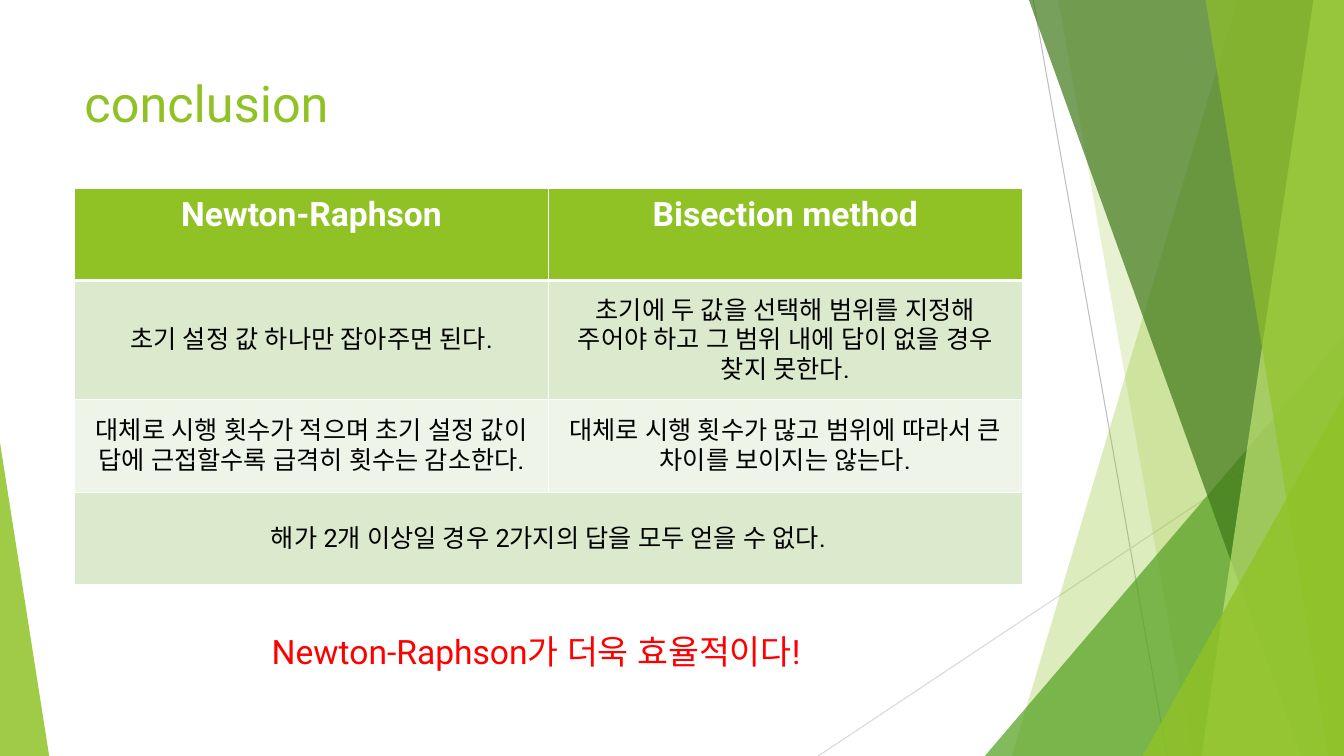
"""Build the conclusion slide comparing two root-finding methods."""
from pptx import Presentation
from pptx.dml.color import RGBColor
from pptx.enum.lang import MSO_LANGUAGE_ID
from pptx.enum.shapes import MSO_CONNECTOR, MSO_SHAPE
from pptx.enum.text import MSO_ANCHOR, PP_ALIGN
from pptx.oxml import parse_xml
from pptx.oxml.ns import nsdecls, qn
from pptx.oxml.xmlchemy import OxmlElement
from pptx.util import Cm, Pt

WIDTH, HEIGHT = 33.87, 19.05
FONT = "Roboto"
LIME = RGBColor(0x90, 0xC2, 0x26)
LEAF = RGBColor(0x54, 0xA0, 0x21)
FOREST = RGBColor(0x3F, 0x78, 0x19)
PALE_LIME = RGBColor(0xC0, 0xE4, 0x74)
BAND_DARK = RGBColor(0xDB, 0xE9, 0xCD)
BAND_LIGHT = RGBColor(0xEE, 0xF4, 0xE8)
GREY = RGBColor(0xBF, 0xBF, 0xBF)
LIGHT_GREY = RGBColor(0xD9, 0xD9, 0xD9)
WHITE = RGBColor(0xFF, 0xFF, 0xFF)
BLACK = RGBColor(0, 0, 0)
RED = RGBColor(0xFF, 0, 0)

ROWS = [
    ("Newton-Raphson", "Bisection method"),
    ("초기 설정 값 하나만 잡아주면 된다.",
     "초기에 두 값을 선택해 범위를 지정해 주어야 하고 그 범위 내에 답이 없을 경우 찾지 못한다."),
    ("대체로 시행 횟수가 적으며 초기 설정 값이 답에 근접할수록 급격히 횟수는 감소한다.",
     "대체로 시행 횟수가 많고 범위에 따라서 큰 차이를 보이지는 않는다."),
    ("해가 2개 이상일 경우 2가지의 답을 모두 얻을 수 없다.",),
]
ROW_HEIGHTS = [2.32, 3, 2.34, 2.32]
ROW_FILLS = [LIME, BAND_DARK, BAND_LIGHT, BAND_DARK]


def write(tf, text, size=18, color=BLACK, bold=False, align=PP_ALIGN.CENTER):
    """Put one formatted run into a text frame."""
    p = tf.paragraphs[0]
    p.alignment = align
    r = p.add_run()
    r.text = text
    r.font.name, r.font.size, r.font.bold = FONT, Pt(size), bold
    r.font.color.rgb = color
    r.font.language_id = MSO_LANGUAGE_ID.KOREAN
    ea = OxmlElement("a:ea")
    ea.set("typeface", FONT)
    r.font._element.find(qn("a:latin")).addnext(ea)


class SlideBuilder:
    """Draw styled elements on the current slide."""

    def __init__(self, slide):
        self.s = slide

    def line(self, x1, y1, x2, y2, color):
        """Draw a thin straight line."""
        cx = self.s.shapes.add_connector(
            MSO_CONNECTOR.STRAIGHT, Cm(x1), Cm(y1), Cm(x2), Cm(y2))
        cx.line.color.rgb = color
        cx.line.width = Pt(0.75)
        cx.element.spPr.append(OxmlElement("a:effectLst"))

    def paint(self, sp, color, opacity):
        """Give a shape a translucent fill and no outline."""
        sp.shadow.inherit = False
        sp.fill.solid()
        sp.fill.fore_color.rgb = color
        sp.line.fill.background()
        alpha = OxmlElement("a:alpha")
        alpha.set("val", str(opacity * 1000))
        sp.element.spPr.find(f"{qn('a:solidFill')}/{qn('a:srgbClr')}").append(alpha)

    def blade(self, top, bottom, color, opacity):
        """Fill from a slanted left edge to the right side of the slide."""
        builder = self.s.shapes.build_freeform(Cm(top), 0)
        builder.add_line_segments([
            (Cm(WIDTH), 0), (Cm(WIDTH), Cm(HEIGHT)), (Cm(bottom), Cm(HEIGHT))])
        self.paint(builder.convert_to_shape(), color, opacity)

    def triangle(self, x, y, width, apex, color, opacity):
        """Draw a triangle standing on the bottom edge of the slide."""
        sp = self.s.shapes.add_shape(
            MSO_SHAPE.ISOSCELES_TRIANGLE, Cm(x), Cm(y), Cm(width), Cm(HEIGHT - y))
        sp.adjustments[0] = apex
        self.paint(sp, color, opacity)

    def text(self, x, y, width, height, text, **style):
        """Add a wrapped text box."""
        tf = self.s.shapes.add_textbox(Cm(x), Cm(y), Cm(width), Cm(height)).text_frame
        tf.word_wrap = True
        write(tf, text, **style)

    def cell(self, cell, fill, bottom):
        """Fill a table cell and give it white borders."""
        cell.fill.solid()
        cell.fill.fore_color.rgb = fill
        tc_pr = cell._tc.get_or_add_tcPr()
        for i, (side, width) in enumerate(zip("LRTB", (1, 1, 1, bottom))):
            tc_pr.insert(i, parse_xml(
                f'<a:ln{side} {nsdecls("a")} w="{Pt(width)}"><a:solidFill>'
                f'<a:srgbClr val="{WHITE}"/></a:solidFill></a:ln{side}>'))

    def table(self, x, y, width, rows, heights, fills):
        """Add the comparison table; a single-entry row spans both columns."""
        table = self.s.shapes.add_table(
            len(rows), 2, Cm(x), Cm(y), Cm(width), Cm(sum(heights))).table
        for i, (texts, height, fill) in enumerate(zip(rows, heights, fills)):
            header = i == 0
            table.rows[i].height = Cm(height)
            for cell in table.rows[i].cells:
                self.cell(cell, fill, 3 if header else 1)
            if len(texts) == 1:
                table.cell(i, 0).merge(table.cell(i, 1))
            for j, text in enumerate(texts):
                cell = table.cell(i, j)
                cell.vertical_anchor = MSO_ANCHOR.TOP if header else MSO_ANCHOR.MIDDLE
                if header:
                    cell.margin_top = Cm(0.18)
                write(cell.text_frame, text, size=24 if header else 18,
                      color=WHITE if header else BLACK, bold=header)


def main():
    """Assemble and save the slide."""
    prs = Presentation()
    prs.slide_width, prs.slide_height = Cm(WIDTH), Cm(HEIGHT)
    s = SlideBuilder(prs.slides.add_slide(prs.slide_layouts[6]))

    s.line(26.04, 0, 29.41, HEIGHT, GREY)
    s.line(WIDTH, 10.24, 20.62, HEIGHT, LIGHT_GREY)
    s.blade(31.19, 25.5, LIME, 30)
    s.blade(26.67, 30.05, LIME, 20)
    s.triangle(24.82, 8.46, 9.05, 1, LEAF, 72)
    s.blade(25.93, 32.79, FOREST, 70)
    s.blade(33.1, 30.28, PALE_LIME, 70)
    s.blade(30.38, 33.48, LIME, 65)
    s.triangle(28.8, 9.98, 5.07, 1, LIME, 80)
    s.triangle(0, 11.15, 1.24, 0, LIME, 85)

    s.text(1.88, 1.7, 23.88, 3.66, "conclusion", size=36, color=LIME, align=PP_ALIGN.LEFT)
    s.table(1.88, 4.75, 23.88, ROWS, ROW_HEIGHTS, ROW_FILLS)
    s.text(4.34, 15.77, 18.34, 1.27, "Newton-Raphson가 더욱 효율적이다!", size=24, color=RED)
    prs.save("out.pptx")


if __name__ == "__main__":
    main()
